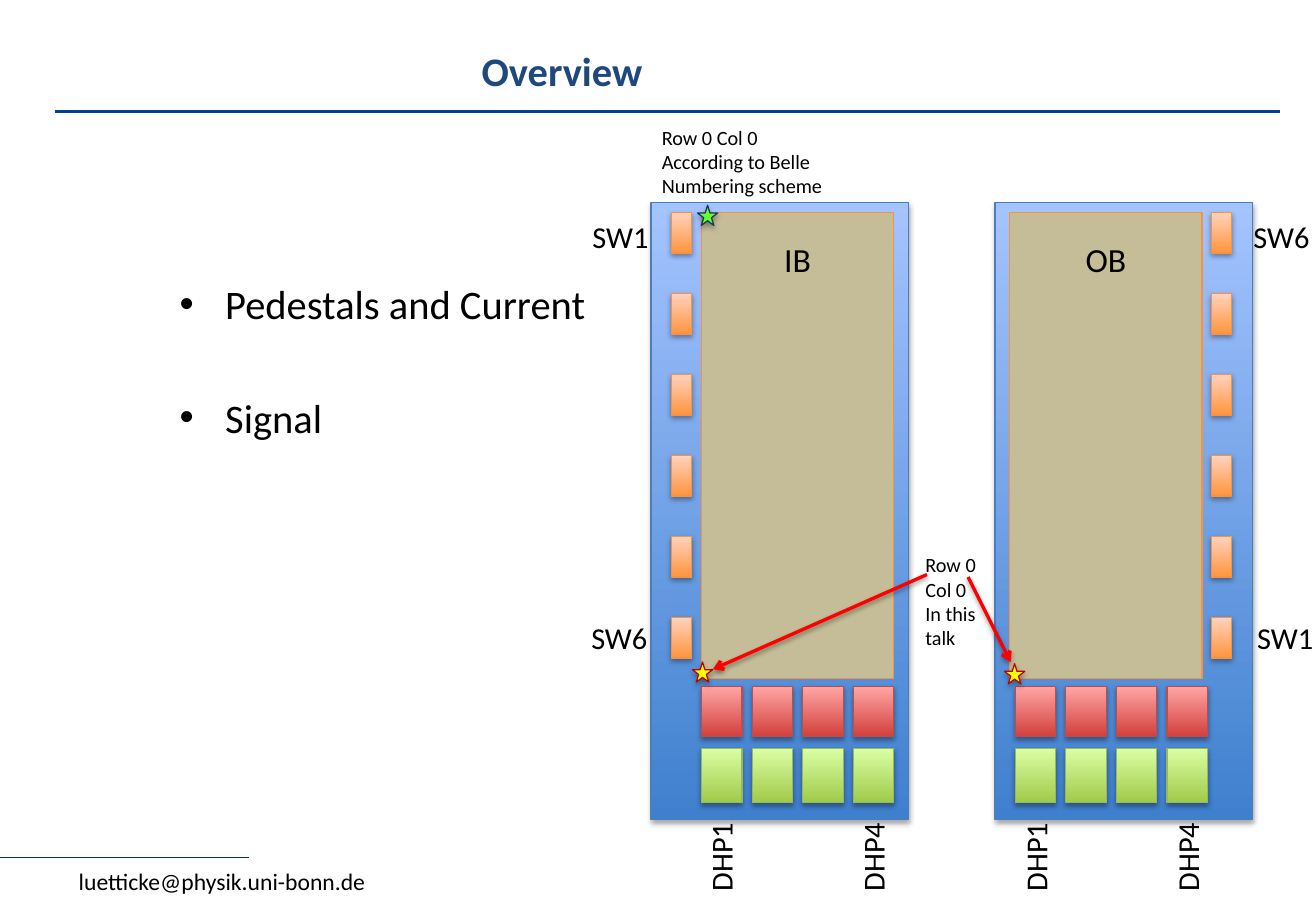
from lxml import etree
from pptx import Presentation
from pptx.dml.color import RGBColor
from pptx.enum.shapes import MSO_CONNECTOR, MSO_SHAPE
from pptx.enum.text import MSO_ANCHOR, PP_ALIGN
from pptx.oxml.ns import qn
from pptx.util import Pt

RECT, STAR = MSO_SHAPE.RECTANGLE, MSO_SHAPE.STAR_5_POINT
LINE = MSO_CONNECTOR.STRAIGHT
MID, CENTER = MSO_ANCHOR.MIDDLE, PP_ALIGN.CENTER

TITLE = "Overview"
TOPICS = ["Pedestals and Current", "Signal"]
MAIL = "luetticke@physik.uni-bonn.de"

# name, left of board, switches, matrix, chips
BOARDS = [
    ("IB", 385.8, 398, 415.8, 415.8),
    ("OB", 589.7, 718, 598.5, 601.7),
]
# text, left, top, width
SIDES = [
    ("SW1", 344, 126, 48.2),
    ("SW6", 343.4, 363.6, 48.2),
    ("SW6", 735.8, 126, 48.2),
    ("SW1", 738, 363.6, 48.2),
]
CHIPS = [("DHP1", 399.6), ("DHP4", 489.6), ("DHP1", 586.1), ("DHP4", 676.1)]
NOTES = [
    (["Row 0", "Col 0", "In this", "talk"], 541.4, 324, 51.1, 65.5),
    (["Row 0 Col 0", "According to Belle Numbering scheme"],
     385.2, 70.6, 117.4, 51.1),
]
# left, top, fill, line
STARS = [
    (595.4, 393.4, "FFFF00", "C00000"),
    (410.4, 392.4, "FFFF00", "C00000"),
    (413.4, 121.7, "66FF33", "17375E"),
]
# x1, y1, x2, y2, colour, width
RULES = [
    (32.4, 66, 758.9, 66, "004292", 1.5),
    (0, 508.3, 147.6, 508.3, "003366", 0.75),
]
ARROWS = [
    (549.4, 340.6, 422.6, 396.7, "FF0000", 2),
    (573.8, 342, 599, 392.4, "FF0000", 2),
]
# bottom colour, top colour, line
BLUE = ("3F80CE", "A4C4FF", "4B7EBC")
ORANGE = ("FF953E", "FFD2BD", "F69240")
RED = ("D1403C", "FFA6A5", "BF4C48")
GREEN = ("A0CA4A", "DAFFA5", "98B955")


def rgb(code):
    return RGBColor.from_string(code)


def shade(effects, alpha=35, dist=1.8):
    """Add a soft shadow below to an effect list."""
    cast = etree.SubElement(
        effects, qn("a:outerShdw"), blurRad=str(Pt(3.1)), dist=str(Pt(dist)),
        dir="5400000", rotWithShape="0")
    tint = etree.SubElement(cast, qn("a:srgbClr"), val="000000")
    etree.SubElement(tint, qn("a:alpha"), val=str(alpha * 1000))


def style(font, size, code="000000", bold=False):
    form = {"name": "Calibri", "size": Pt(size), "bold": bold}
    for key, value in form.items():
        setattr(font, key, value)
    font.color.rgb = rgb(code)


def shape(kind, x, y, w, h, fills, edge, shadow=True):
    """Draw a shape; one fill is solid, two run from bottom to top."""
    item = slide.shapes.add_shape(kind, Pt(x), Pt(y), Pt(w), Pt(h))
    if len(fills) == 1:
        item.fill.solid()
        item.fill.fore_color.rgb = rgb(fills[0])
    else:
        item.fill.gradient()
        item.fill.gradient_angle = 90
        for stop, code in zip(item.fill.gradient_stops, fills):
            stop.color.rgb = rgb(code)
    item.line.color.rgb = rgb(edge)
    item.line.width = Pt(0.75)
    item.shadow.inherit = False
    if shadow:
        shade(item._element.spPr.find(qn("a:effectLst")))


def line(x1, y1, x2, y2, code, width, arrow=False):
    item = slide.shapes.add_connector(LINE, Pt(x1), Pt(y1), Pt(x2), Pt(y2))
    item.line.color.rgb = rgb(code)
    item.line.width = Pt(width)
    props = item._element.spPr
    effects = etree.SubElement(props, qn("a:effectLst"))
    if arrow:
        etree.SubElement(props.find(qn("a:ln")), qn("a:tailEnd"), type="arrow")
        shade(effects, 38, 1.6)


def label(lines, x, y, w, h, size, wrap=True, turn=0):
    box = slide.shapes.add_textbox(Pt(x), Pt(y), Pt(w), Pt(h))
    box.rotation = turn
    frame = box.text_frame
    frame.word_wrap = wrap
    frame.text = "\n".join(lines)
    for para in frame.paragraphs:
        style(para.font, size)
    return frame


def bullet(para):
    props = para._p.get_or_add_pPr()
    props.set("marL", str(Pt(27)))
    props.set("indent", str(Pt(-27)))
    etree.SubElement(props, qn("a:buFont"), typeface="Arial")
    etree.SubElement(props, qn("a:buChar"), char="•")


def topics():
    box = slide.shapes.add_textbox(Pt(99.4), Pt(162), Pt(285), Pt(234.7))
    frame = box.text_frame
    frame.word_wrap = True
    frame.text = "\n".join(TOPICS)
    for i, para in enumerate(frame.paragraphs):
        bullet(para)
        style(para.font, 24)
        if i:
            para.space_before = Pt(38.4)


def board(name, left, switch, matrix, chip):
    shape(RECT, left, 120, 152.6, 366, BLUE[:2], BLUE[2])
    for i in range(6):
        shape(RECT, switch, 126 + 48 * i, 12, 24, ORANGE[:2], ORANGE[2])
    for i in range(4):
        for y, h, tone in [(406.8, 30, RED), (443.5, 32.4, GREEN)]:
            shape(RECT, chip + 30 * i, y, 24, h, tone[:2], tone[2])
    shape(RECT, matrix, 126, 114, 276, ["C4BD97"], "F69240", False)
    tag = label([name], matrix, 138.2, 114, 31.5, 20)
    tag.paragraphs[0].alignment = CENTER


deck = Presentation()
deck.slide_width, deck.slide_height = Pt(780), Pt(540)
slide = deck.slides.add_slide(deck.slide_layouts[5])

head = slide.shapes.title
place = {"left": 38.2, "top": 23.8, "width": 589.7, "height": 36}
for key, value in place.items():
    setattr(head, key, Pt(value))
head.text_frame.text = TITLE
head.text_frame.vertical_anchor = MID
first = head.text_frame.paragraphs[0]
first.alignment = CENTER
style(first.font, 24, "1F497D", True)

for rule in RULES:
    line(*rule)
topics()
label([MAIL], 39.6, 508, 220.3, 28.8, 14).vertical_anchor = MID
for row in BOARDS:
    board(*row)
for text, x, y, w in SIDES:
    label([text], x, y, w, 29.1, 18, wrap=False)
for text, x in CHIPS:
    label([text], x, 493.2, 55.4, 29.1, 18, wrap=False, turn=270)
for x, y, fill, edge in STARS:
    shape(STAR, x, y, 12, 12, [fill], edge)
for lines, x, y, w, h in NOTES:
    label(lines, x, y, w, h, 12)
for arrow in ARROWS:
    line(*arrow, arrow=True)

deck.save("out.pptx")
